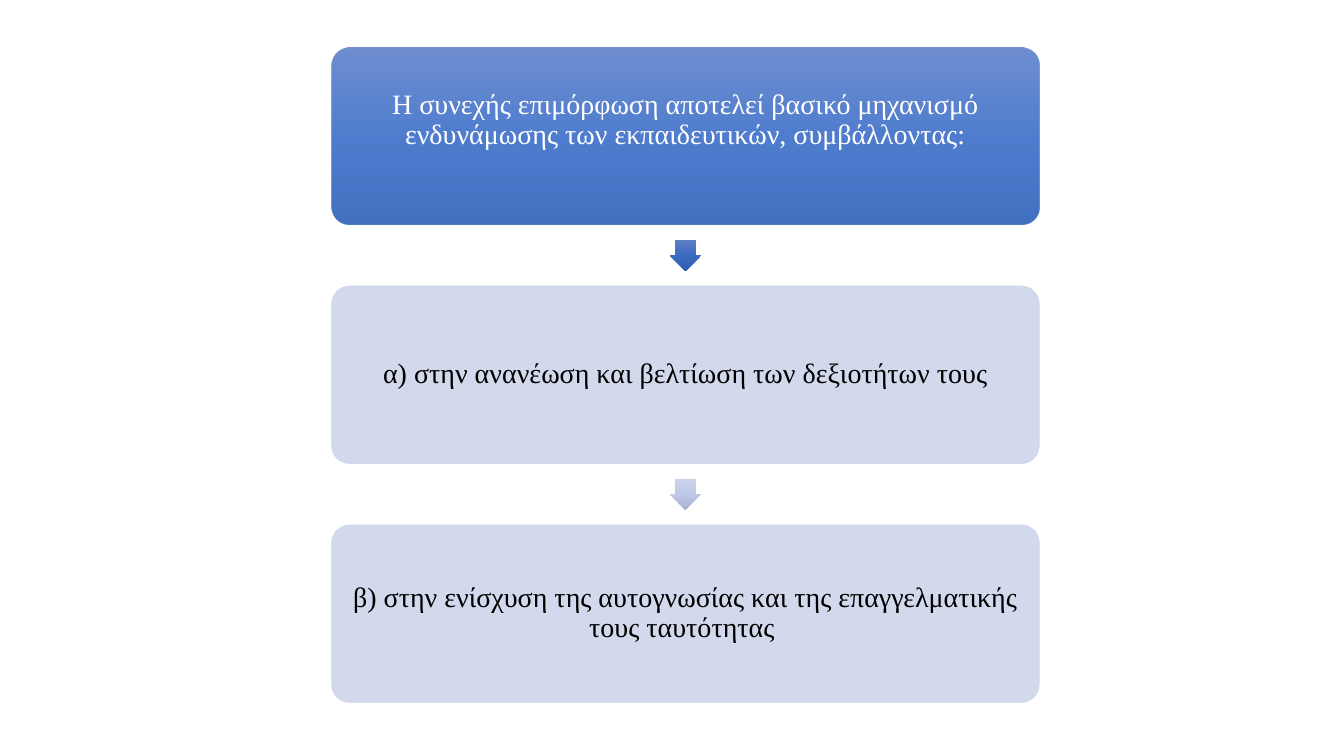
from dataclasses import dataclass
from lxml.etree import SubElement
from pptx import Presentation
from pptx.dml.color import RGBColor
from pptx.dml.fill import FillFormat
from pptx.enum.shapes import MSO_SHAPE
from pptx.enum.text import MSO_ANCHOR, PP_ALIGN
from pptx.oxml.ns import qn
from pptx.shapes.autoshape import Shape
from pptx.util import Cm, Pt

COLORS = {
    "white": "FFFFFF",
    "black": "000000",
    "pale": "CFD5EA",
    "header_top": "6183CB",
    "header_middle": "3E70CA",
    "header_bottom": "3062BB",
    "blue_top": "5E7EC4",
    "blue_middle": "3B6BC1",
    "blue_bottom": "2F5EB1",
    "pale_top": "CAD2E9",
    "pale_middle": "BFC9E6",
    "pale_bottom": "A7B1CF",
}
CARD_LEFT, CARD_TOP = 8.36, 1.19
CARD_WIDTH, CARD_HEIGHT = 17.83, 4.47
STEP = 6.02
ARROW_SIZE = 0.78
INSET = 0.21
CARD_OPACITY = 90


@dataclass
class Card:
    text: str
    fill: tuple[str, ...]
    font_color: str
    bottom_inset: float = INSET


CARDS = [
    Card(
        "Η συνεχής επιμόρφωση αποτελεί βασικό μηχανισμό ενδυνάμωσης των εκπαιδευτικών, συμβάλλοντας:",
        ("header_top", "header_middle", "header_bottom"),
        "white",
        INSET + 0.78,
    ),
    Card("α) στην ανανέωση και βελτίωση των δεξιοτήτων τους", ("pale",), "black"),
    Card(
        "β) στην ενίσχυση της αυτογνωσίας και της επαγγελματικής τους ταυτότητας ",
        ("pale",),
        "black",
    ),
]
ARROW_FILLS = [
    ("blue_top", "blue_middle", "blue_bottom"),
    ("pale_top", "pale_middle", "pale_bottom"),
]


def color(name: str) -> RGBColor:
    return RGBColor.from_string(COLORS[name])


def set_opacity(shape: Shape, percent: int) -> None:
    for element in shape._element.spPr.iter(qn("a:srgbClr")):
        SubElement(element, qn("a:alpha"), val=str(percent * 1000))


def fill_vertical(shape: Shape, names: tuple[str, ...]) -> None:
    fill: FillFormat = shape.fill
    if len(names) == 1:
        fill.solid()
        fill.fore_color.rgb = color(names[0])
        return
    fill.gradient()
    fill.gradient_angle = 270
    stops = shape._element.spPr.find(qn("a:gradFill")).find(qn("a:gsLst"))
    for stop in list(stops):
        stops.remove(stop)
    for index, name in enumerate(names):
        position = 100000 * index // (len(names) - 1)
        stop = SubElement(stops, qn("a:gs"), pos=str(position))
        SubElement(stop, qn("a:srgbClr"), val=COLORS[name])


def add_card(page, card: Card, top: float) -> None:
    box = page.shapes.add_shape(
        MSO_SHAPE.ROUNDED_RECTANGLE,
        Cm(CARD_LEFT), Cm(top), Cm(CARD_WIDTH), Cm(CARD_HEIGHT),
    )
    box.adjustments[0] = 0.1
    box.shadow.inherit = False
    fill_vertical(box, card.fill)
    if len(card.fill) == 1:
        box.line.color.rgb = color(card.fill[0])
        box.line.width = Pt(0.5)
    else:
        box.line.fill.background()
    set_opacity(box, CARD_OPACITY)

    frame = box.text_frame
    frame.word_wrap = True
    frame.vertical_anchor = MSO_ANCHOR.MIDDLE
    frame.margin_left = frame.margin_right = frame.margin_top = Cm(INSET)
    frame.margin_bottom = Cm(card.bottom_inset)
    para = frame.paragraphs[0]
    para.alignment = PP_ALIGN.CENTER
    para.line_spacing = 0.9
    span = para.add_run()
    span.text = card.text
    span.font.name = "Times New Roman"
    span.font.size = Pt(20)
    span.font.color.rgb = color(card.font_color)


def add_arrow(page, names: tuple[str, ...], card_top: float) -> None:
    left = CARD_LEFT + (CARD_WIDTH - ARROW_SIZE) / 2
    top = card_top + (CARD_HEIGHT + STEP - ARROW_SIZE) / 2
    arrow = page.shapes.add_shape(
        MSO_SHAPE.DOWN_ARROW, Cm(left), Cm(top), Cm(ARROW_SIZE), Cm(ARROW_SIZE)
    )
    arrow.adjustments[0] = 0.667
    arrow.adjustments[1] = 0.5
    arrow.shadow.inherit = False
    arrow.line.fill.background()
    fill_vertical(arrow, names)


def main() -> None:
    deck = Presentation()
    deck.slide_width, deck.slide_height = Cm(33.87), Cm(19.05)
    page = deck.slides.add_slide(deck.slide_layouts[6])
    for index, card in enumerate(CARDS):
        add_card(page, card, CARD_TOP + index * STEP)
    for index, names in enumerate(ARROW_FILLS):
        add_arrow(page, names, CARD_TOP + index * STEP)
    deck.save("out.pptx")


if __name__ == "__main__":
    main()
